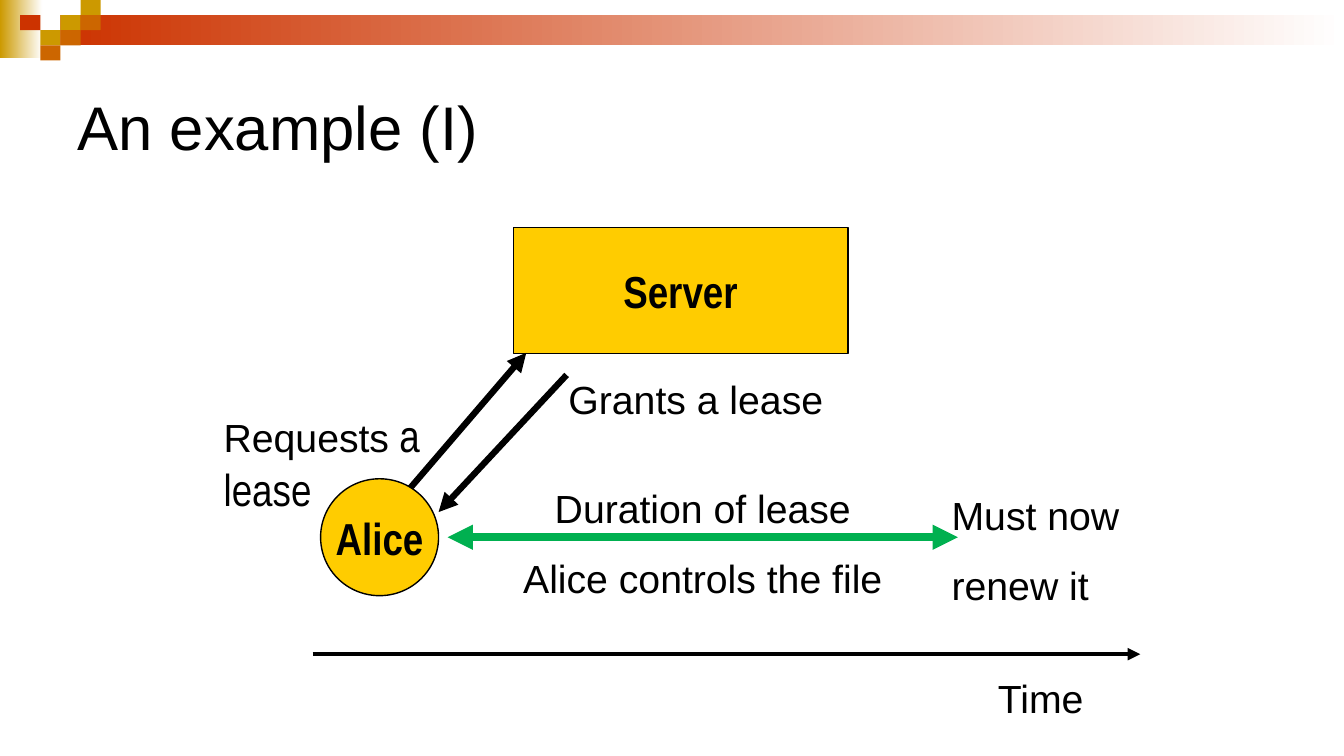
from lxml.etree import SubElement
from pptx import Presentation
from pptx.dml.color import RGBColor
from pptx.enum.shapes import MSO_CONNECTOR, MSO_SHAPE
from pptx.enum.text import MSO_ANCHOR, MSO_AUTO_SIZE, PP_ALIGN
from pptx.oxml.ns import qn
from pptx.util import Emu, Pt

BLACK = RGBColor(0x00, 0x00, 0x00)
WHITE = RGBColor(0xFF, 0xFF, 0xFF)
YELLOW = RGBColor(0xFF, 0xCC, 0x00)
GREEN = RGBColor(0x00, 0xB0, 0x50)
GOLD = RGBColor(0xCC, 0x99, 0x00)
ORANGE = RGBColor(0xCC, 0x66, 0x00)
RED = RGBColor(0xCC, 0x33, 0x00)

EMU_PER_PX = 9144  # 100 px to the inch
BODY = ("Arial", 28, False)
TITLE = ("Arial", 44, False)
NARROW = ("Arial Narrow", 32, False)
NODE = ("Arial Narrow", 32, True)


def px(n):
    return Emu(n * EMU_PER_PX)


class Deck:
    def __init__(self, width, height):
        self.prs = Presentation()
        self.prs.slide_width, self.prs.slide_height = px(width), px(height)
        self.s = self.prs.slides.add_slide(self.prs.slide_layouts[6])

    def run(self, p, text, style):
        r = p.add_run()
        r.text = text
        r.font.name, size, r.font.bold = style
        r.font.size = Pt(size)
        r.font.color.rgb = BLACK

    def box(self, x, y, w, h, fill, kind=MSO_SHAPE.RECTANGLE):
        sp = self.s.shapes.add_shape(kind, px(x), px(y), px(w), px(h))
        sp.shadow.inherit = False
        sp.fill.solid()
        sp.fill.fore_color.rgb = fill
        sp.line.fill.background()
        return sp

    def fade(self, x, y, w, h, color):
        sp = self.box(x, y, w, h, color)
        sp.fill.gradient()
        sp.fill.gradient_angle = 0
        for stop, rgb in zip(sp.fill.gradient_stops, (color, WHITE)):
            stop.color.rgb = rgb

    def node(self, x, y, w, h, label, kind=MSO_SHAPE.RECTANGLE):
        sp = self.box(x, y, w, h, YELLOW, kind)
        sp.line.color.rgb = BLACK
        sp.line.width = Pt(1)
        tf = sp.text_frame
        tf.word_wrap = False
        tf.vertical_anchor = MSO_ANCHOR.MIDDLE
        p = tf.paragraphs[0]
        p.alignment = PP_ALIGN.CENTER
        self.run(p, label, NODE)

    def text(self, x, y, w, h, lines=(), style=BODY, wrap=False,
             align=PP_ALIGN.LEFT, spacing=None, grow=True):
        tf = self.s.shapes.add_textbox(px(x), px(y), px(w), px(h)).text_frame
        tf.word_wrap = wrap
        tf.auto_size = MSO_AUTO_SIZE.SHAPE_TO_FIT_TEXT if grow else MSO_AUTO_SIZE.NONE
        for i, line in enumerate(lines):
            p = tf.add_paragraph() if i else tf.paragraphs[0]
            p.alignment, p.line_spacing = align, spacing
            self.run(p, line, style)
        return tf

    def arrow(self, x1, y1, x2, y2, width, color=BLACK, ends=("tailEnd",)):
        c = self.s.shapes.add_connector(
            MSO_CONNECTOR.STRAIGHT, px(x1), px(y1), px(x2), px(y2))
        c.line.color.rgb = color
        c.line.width = Pt(width)
        for end in ends:
            SubElement(c.line._get_or_add_ln(), qn("a:" + end), type="triangle")
        SubElement(c._element.spPr, qn("a:effectLst"))


def main():
    deck = Deck(1333, 750)

    # Banner: two fades and a mosaic of tiles
    deck.fade(0, 0, 42, 58, GOLD)
    deck.fade(60, 15, 1273, 30, RED)
    tile_w, tile_h = 20, 15
    for col, row, color in ((3, 1, GOLD), (4, 0, GOLD), (4, 1, ORANGE),
                            (2, 2, GOLD), (1, 1, RED), (3, 2, ORANGE),
                            (2, 3, ORANGE)):
        deck.box(col * tile_w, row * tile_h, tile_w, tile_h, color)

    # Title
    tf = deck.text(67, 50, 1200, 150, ["An example (I)"], TITLE, wrap=True, grow=False)
    tf.vertical_anchor = MSO_ANCHOR.MIDDLE

    # Time axis
    deck.arrow(310, 649, 1131, 649, 3)
    deck.text(980, 664, 106, 57, ["Time"])

    # Server, Alice and the request
    deck.node(509, 226, 332, 125, "Server")
    deck.arrow(401, 491, 522, 350, 4.5)
    deck.node(318, 475, 117, 116, "Alice", MSO_SHAPE.OVAL)
    p = deck.text(212, 400, 217, 118).paragraphs[0]
    deck.run(p, "Requests", BODY)
    deck.run(p, " a", NARROW)
    p.add_line_break()
    deck.run(p, "lease", NARROW)

    # Lease duration
    deck.arrow(444, 533, 950, 533, 6, GREEN, ("headEnd", "tailEnd"))
    deck.text(384, 452, 626, 151, ["Duration of lease", "Alice controls the file"],
              wrap=True, align=PP_ALIGN.CENTER, spacing=1.5)
    deck.text(934, 459, 198, 143, ["Must now", "renew it"], wrap=True, spacing=1.5)

    # Grant
    deck.arrow(562, 372, 435, 508, 4.5)
    deck.text(554, 367, 276, 57, ["Grants a lease"])

    deck.prs.save("out.pptx")


if __name__ == "__main__":
    main()
